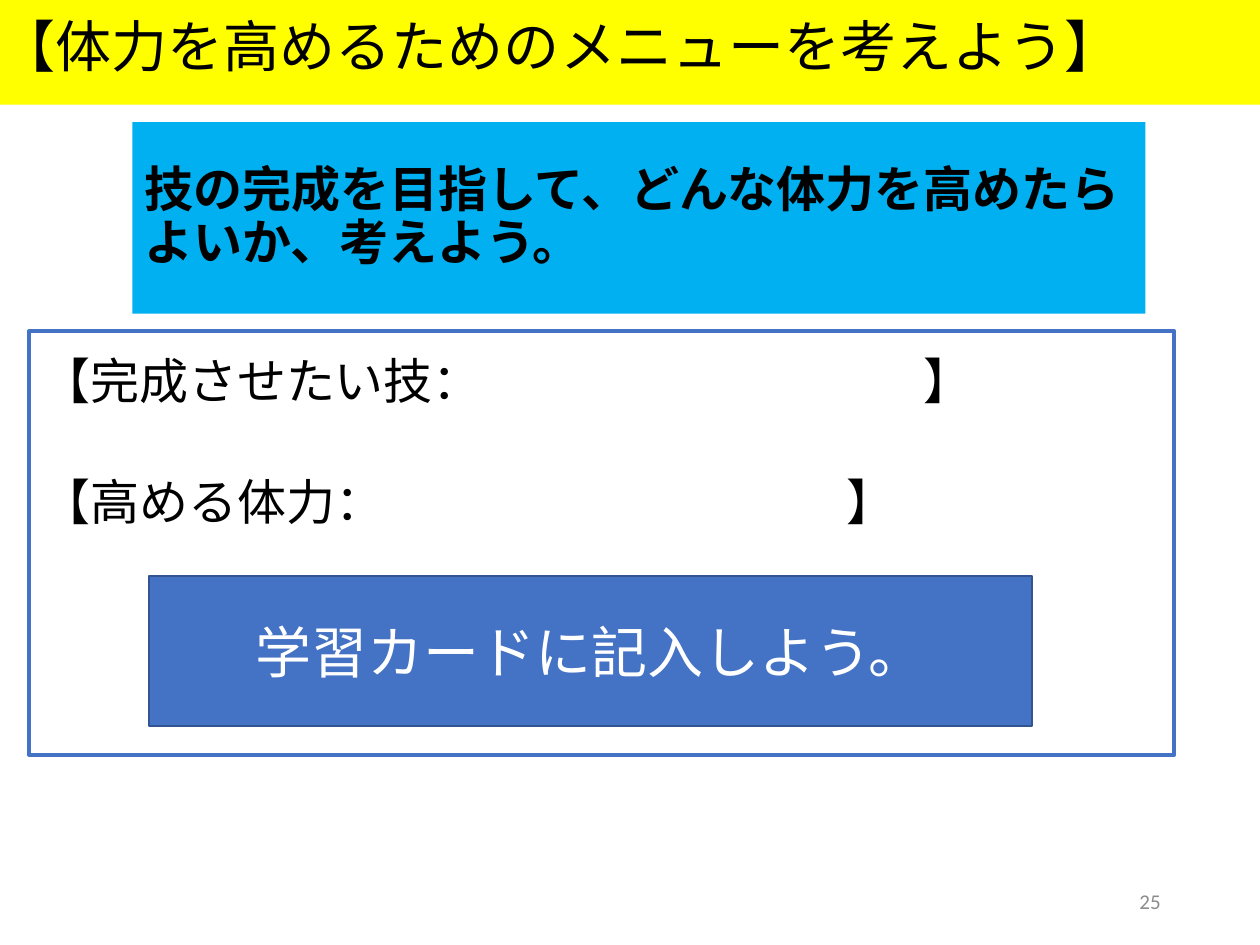
from dataclasses import dataclass

from lxml.etree import SubElement
from pptx import Presentation
from pptx.dml.color import RGBColor as Color
from pptx.enum.shapes import MSO_SHAPE as Shape
from pptx.enum.text import MSO_ANCHOR as Anchor, PP_ALIGN as Align
from pptx.oxml.ns import qn
from pptx.util import Pt


@dataclass(frozen=True)
class Theme:
    yellow: str = "FFFF00"
    sky: str = "00B0F0"
    blue: str = "4472C4"
    navy: str = "325491"
    black: str = "000000"
    white: str = "FFFFFF"
    gray: str = "8C8C8C"
    japanese: str = "Noto Sans CJK JP"
    latin: str = "Calibri"
    heading: int = 32
    body: int = 28
    small: int = 12
    tight: float = 0.9


THEME = Theme()


def write(shape, text, size, color=THEME.black, font=THEME.japanese,
          bold=False, align=Align.LEFT, spacing=THEME.tight):
    frame = shape.text_frame
    frame.word_wrap = True
    frame.vertical_anchor = Anchor.MIDDLE
    para = frame.paragraphs[0]
    para.text = text
    para.alignment = align
    para.line_spacing = spacing
    para.font.size = Pt(size)
    para.font.bold = bold
    para.font.name = font
    para.font.color.rgb = Color.from_string(color)
    defaults = para._p.pPr.find(qn("a:defRPr"))
    SubElement(defaults, qn("a:ea"), typeface=THEME.japanese)
    return para


def add_panel(page, bounds, fill=None, line=None, width=1):
    panel = page.shapes.add_shape(Shape.RECTANGLE, *map(Pt, bounds))
    panel.shadow.inherit = False
    if fill:
        panel.fill.solid()
        panel.fill.fore_color.rgb = Color.from_string(fill)
    else:
        panel.fill.background()
    if line:
        panel.line.color.rgb = Color.from_string(line)
        panel.line.width = Pt(width)
    else:
        panel.line.fill.background()
    return panel


def add_label(page, bounds, text, size, **style):
    box = page.shapes.add_textbox(*map(Pt, bounds))
    return write(box, text, size, **style)


def add_blank_field(page, bounds, prompt, closing):
    para = add_label(page, bounds, f"【{prompt}：\t】", THEME.body)
    properties = para._p.pPr
    stops = SubElement(properties, qn("a:tabLst"))
    SubElement(stops, qn("a:tab"), pos=str(Pt(closing)), algn="l")
    properties.find(qn("a:defRPr")).addprevious(stops)


def main():
    deck = Presentation()
    deck.slide_width, deck.slide_height = Pt(720), Pt(540)
    page = deck.slides.add_slide(deck.slide_layouts[6])

    add_panel(page, (0, 0, 721.4, 59.8), fill=THEME.yellow)
    add_blank_field(page, (16.6, 198, 568, 42.5), "完成させたい技", 504)
    add_label(page, (508.3, 500.4, 162, 28.8), "25", THEME.small,
              color=THEME.gray, font=THEME.latin, align=Align.RIGHT, spacing=1.0)
    add_panel(page, (16.6, 189.4, 654.5, 241.9), line=THEME.blue, width=2.25)
    add_label(page, (-7.2, 13.7, 719.3, 29.5),
              "【体力を高めるためのメニューを考えよう】", THEME.heading)

    goal = add_panel(page, (75.6, 69.8, 578.9, 109.4), fill=THEME.sky)
    write(goal, "技の完成を目指して、どんな体力を高めたらよいか、考えよう。",
          THEME.body, bold=True)
    add_blank_field(page, (16.6, 260.6, 562.3, 55.4), "高める体力", 460)

    task = add_panel(page, (85, 329, 504.7, 85.7), fill=THEME.blue, line=THEME.navy)
    write(task, "学習カードに記入しよう。", THEME.heading, color=THEME.white,
          font=THEME.latin, align=Align.CENTER, spacing=1.0)

    deck.save("out.pptx")


if __name__ == "__main__":
    main()
